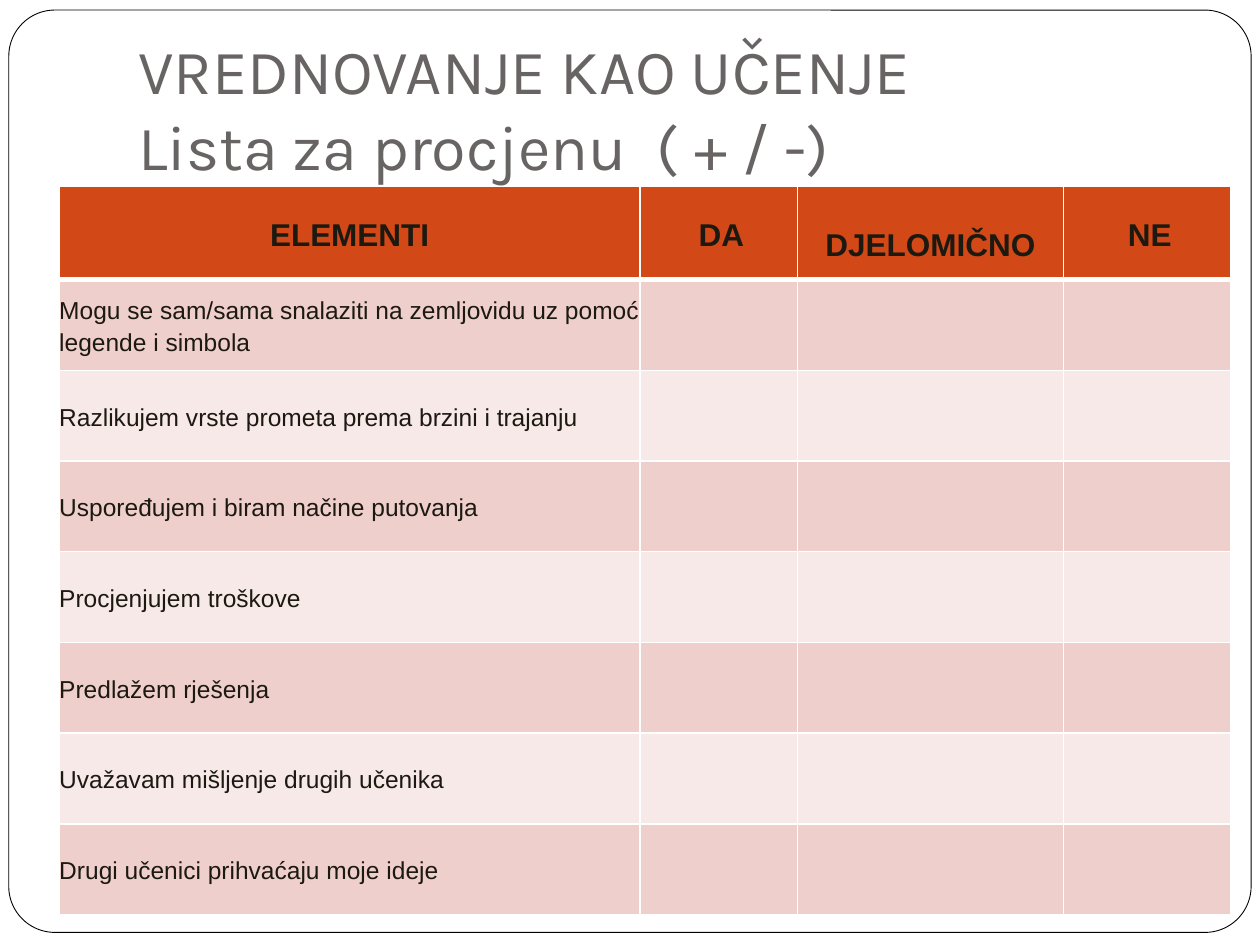
from lxml import etree
from pptx import Presentation
from pptx.dml.color import RGBColor
from pptx.enum.shapes import MSO_SHAPE
from pptx.enum.text import MSO_ANCHOR, PP_ALIGN
from pptx.oxml.ns import qn
from pptx.util import Inches, Pt

ROUNDED = MSO_SHAPE.ROUNDED_RECTANGLE
MIDDLE, BOTTOM = MSO_ANCHOR.MIDDLE, MSO_ANCHOR.BOTTOM
LEFT, CENTER = PP_ALIGN.LEFT, PP_ALIGN.CENTER

TITLE = "VREDNOVANJE KAO UČENJE\vLista za procjenu  ( + / -)"
HEADERS = ["ELEMENTI", "DA", "DJELOMIČNO", "NE"]
ELEMENTS = [
    "Mogu se sam/sama snalaziti na zemljovidu uz pomoć legende i simbola",
    "Razlikujem vrste prometa prema brzini i trajanju",
    "Uspoređujem i biram načine putovanja",
    "Procjenjujem troškove",
    "Predlažem rješenja",
    "Uvažavam mišljenje drugih učenika",
    "Drugi učenici prihvaćaju moje ideje",
]
COLUMN_WIDTHS = [4.61, 1.25, 2.11, 1.33]
HEADER_HEIGHT, ROW_HEIGHT = 0.74, 0.72
# Left and top insets that nudge single header cells
HEADER_INSETS = [(0, 0), (0.04, 0), (0, 0.16), (0.04, 0)]

HEADER_FILL, BAND_FILLS = "D34817", ["EFCFCC", "F7E9E8"]
WHITE, BLACK, TITLE_COLOR, TEXT_COLOR = "FFFFFF", "000000", "696464", "1C1911"
HEADER_FONT = {"name": "Arial", "size": Pt(18), "bold": True}
BODY_FONT = {"name": "Arial", "size": Pt(14), "bold": False}
TITLE_FONT = {"name": "Karla", "size": Pt(36), "bold": False}
CELL_PARAGRAPH = {"line_spacing": 1.15, "space_after": Pt(7.5)}


def set_attributes(target, values):
    for name, value in values.items():
        setattr(target, name, value)


def paint(fill, color):
    fill.solid()
    fill.fore_color.rgb = RGBColor.from_string(color)


def style_font(font, values, color):
    set_attributes(font, values)
    font.color.rgb = RGBColor.from_string(color)


def add_borders(cell, bottom_width):
    """Draw white cell borders; the schema wants them before the fill."""
    properties = cell._tc.get_or_add_tcPr()
    widths = {"a:lnL": 1, "a:lnR": 1, "a:lnT": 1, "a:lnB": bottom_width}
    for index, (tag, width) in enumerate(widths.items()):
        line = etree.Element(qn(tag), w=str(Pt(width)))
        fill = etree.SubElement(line, qn("a:solidFill"))
        etree.SubElement(fill, qn("a:srgbClr"), val=WHITE)
        properties.insert(index, line)


def write_cell(cell, text, font, alignment, insets=(0, 0)):
    left, top = insets
    set_attributes(cell, {
        "margin_left": Inches(left), "margin_top": Inches(top),
        "margin_right": 0, "margin_bottom": 0, "vertical_anchor": MIDDLE,
    })
    paragraph = cell.text_frame.paragraphs[0]
    set_attributes(paragraph, {**CELL_PARAGRAPH, "alignment": alignment})
    run = paragraph.add_run()
    run.text = text
    style_font(run.font, font, TEXT_COLOR)


def add_frame(slide):
    frame = slide.shapes.add_shape(
        ROUNDED, Inches(0.07), Inches(0.08), Inches(9.86), Inches(7.32))
    frame.adjustments[0] = 0.05
    frame.shadow.inherit = False
    paint(frame.fill, WHITE)
    paint(frame.line.fill, BLACK)
    frame.line.width = Pt(0.5)


def add_title(slide):
    title = slide.shapes.add_textbox(
        Inches(1), Inches(0.3), Inches(8.5), Inches(1.25))
    set_attributes(title.text_frame, {
        "word_wrap": True, "vertical_anchor": BOTTOM,
        "margin_bottom": Inches(0.1),
    })
    paragraph = title.text_frame.paragraphs[0]
    paragraph.text = TITLE
    for run in paragraph.runs:
        style_font(run.font, TITLE_FONT, TITLE_COLOR)


def add_checklist(slide):
    heights = [HEADER_HEIGHT] + [ROW_HEIGHT] * len(ELEMENTS)
    table = slide.shapes.add_table(
        len(heights), len(HEADERS), Inches(0.47), Inches(1.48),
        Inches(sum(COLUMN_WIDTHS)), Inches(sum(heights))).table
    for column, width in zip(table.columns, COLUMN_WIDTHS):
        column.width = Inches(width)
    for index, (row, height) in enumerate(zip(table.rows, heights)):
        row.height = Inches(height)
        for cell in row.cells:
            paint(cell.fill, BAND_FILLS[(index - 1) % 2] if index else HEADER_FILL)
            add_borders(cell, 1 if index else 3)
    for column, (text, insets) in enumerate(zip(HEADERS, HEADER_INSETS)):
        write_cell(table.cell(0, column), text, HEADER_FONT, CENTER, insets)
    for row, text in enumerate(ELEMENTS, start=1):
        write_cell(table.cell(row, 0), text, BODY_FONT, LEFT)


def main():
    presentation = Presentation()
    presentation.slide_width, presentation.slide_height = Inches(10), Inches(7.5)
    slide = presentation.slides.add_slide(presentation.slide_layouts[6])
    add_frame(slide)
    add_title(slide)
    add_checklist(slide)
    presentation.save("out.pptx")


if __name__ == "__main__":
    main()
